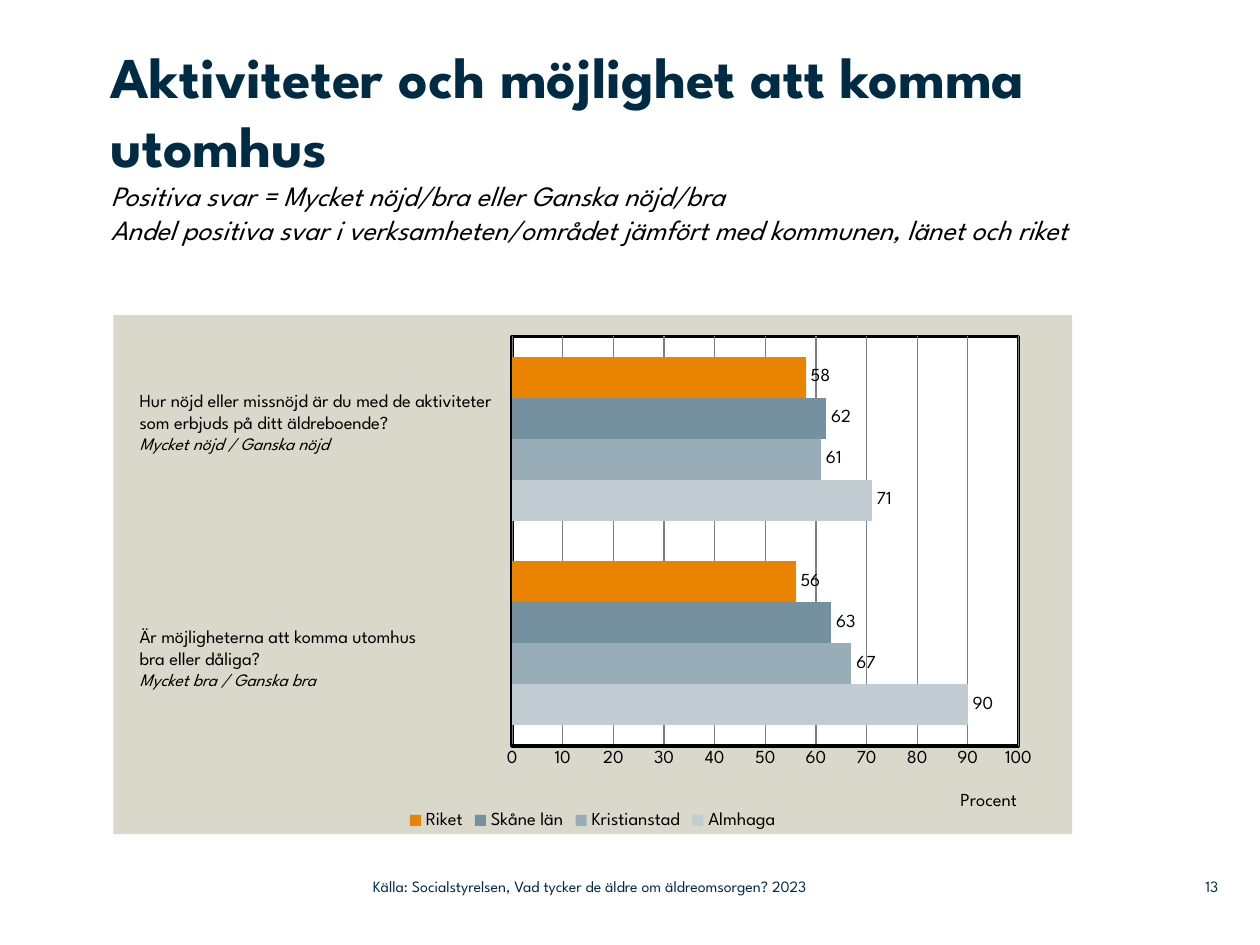
from lxml import etree
from pptx import Presentation
from pptx.chart.data import CategoryChartData
from pptx.dml.color import RGBColor
from pptx.enum.chart import XL_CHART_TYPE, XL_LABEL_POSITION, XL_LEGEND_POSITION, XL_TICK_MARK
from pptx.enum.text import MSO_ANCHOR, MSO_AUTO_SIZE, PP_ALIGN
from pptx.oxml import parse_xml
from pptx.oxml.ns import nsdecls, qn
from pptx.util import Inches, Pt

BAR = XL_CHART_TYPE.BAR_CLUSTERED
OUTSIDE_END = XL_LABEL_POSITION.OUTSIDE_END
LEGEND_BOTTOM = XL_LEGEND_POSITION.BOTTOM
NO_TICK = XL_TICK_MARK.NONE
TOP, MIDDLE = MSO_ANCHOR.TOP, MSO_ANCHOR.MIDDLE
LEFT, RIGHT = PP_ALIGN.LEFT, PP_ALIGN.RIGHT

THEME = {
    "font": "League Spartan",
    "navy": "002B45", "black": "000000", "white": "FFFFFF",
    "panel": "DAD7CB", "grid": "808080",
    "title": 33, "subtitle": 16, "body": 10.5, "answer": 10, "footer": 9,
}

HEADING = [
    ("Aktiviteter och möjlighet att komma utomhus", "title", "navy", True, False),
    ("Positiva svar = Mycket nöjd/bra eller Ganska nöjd/bra", "subtitle", "black", False, True),
    ("Andel positiva svar i verksamheten/området jämfört med kommunen, länet och riket",
     "subtitle", "black", False, True),
]
QUESTIONS = [
    (3.04, 0.98, ["Hur nöjd eller missnöjd är du med de aktiviteter som erbjuds på ditt äldreboende?"],
     "Mycket nöjd / Ganska nöjd"),
    (4.91, 0.81, ["Är möjligheterna att komma utomhus", "bra eller dåliga?"],
     "Mycket bra / Ganska bra"),
]
CATEGORIES = ["1", "2"]
SERIES = [
    ("Almhaga", (90, 71), "C2CDD3"),
    ("Kristianstad", (67, 61), "99ADB9"),
    ("Skåne län", (63, 62), "75909F"),
    ("Riket", (56, 58), "E98300"),
]
AXIS_TITLE = "Procent"
FOOTERS = [
    (2.96, 4.43, "Källa: Socialstyrelsen, Vad tycker de äldre om äldreomsorgen? 2023", LEFT),
    (9.2, 0.47, "13", RIGHT),
]


def style(font, size, color="black", bold=False, italic=False):
    font.name = THEME["font"]
    font.size = Pt(THEME[size])
    font.bold, font.italic = bold, italic
    font.color.rgb = RGBColor.from_string(THEME[color])


def paint(fill, color):
    fill.solid()
    fill.fore_color.rgb = RGBColor.from_string(color)


def write(frame, lines, margin=None, anchor=TOP, align=LEFT):
    frame.word_wrap = True
    frame.auto_size = MSO_AUTO_SIZE.NONE
    frame.vertical_anchor = anchor
    if margin is not None:
        frame.margin_left = frame.margin_right = frame.margin_top = frame.margin_bottom = margin
    for index, (text, *look) in enumerate(lines):
        paragraph = frame.add_paragraph() if index else frame.paragraphs[0]
        paragraph.text = text
        paragraph.alignment = align
        style(paragraph.font, *look)


def manual_layout(target, **places):
    for old in target.findall(qn("c:layout")):
        target.remove(old)
    layout = etree.Element(qn("c:layout"))
    manual = etree.SubElement(layout, qn("c:manualLayout"))
    for tag, value in places.items():
        etree.SubElement(manual, qn("c:" + tag)).set("val", str(value))
    return layout


def add_answers_chart(slide):
    data = CategoryChartData()
    data.categories = CATEGORIES
    for name, values, _ in SERIES:
        data.add_series(name, values)
    chart = slide.shapes.add_chart(
        BAR, Inches(0.9), Inches(2.5), Inches(7.61), Inches(4.12), data).chart
    chart.has_title = False
    style(chart.font, "body")

    plot = chart.plots[0]
    plot.vary_by_categories = False
    plot.gap_width, plot.overlap = 100, 0
    plot.has_data_labels = True
    plot.data_labels.show_value = True
    plot.data_labels.position = OUTSIDE_END
    style(plot.data_labels.font, "body")
    for series, (_, _, color) in zip(plot.series, SERIES):
        paint(series.format.fill, color)

    chart.category_axis.visible = False
    axis = chart.value_axis
    axis.minimum_scale, axis.maximum_scale, axis.major_unit = 0, 100, 10
    axis.major_tick_mark = axis.minor_tick_mark = NO_TICK
    axis.format.line.color.rgb = RGBColor.from_string(THEME["black"])
    axis.format.line.width = Pt(2)
    axis.major_gridlines.format.line.color.rgb = RGBColor.from_string(THEME["grid"])
    axis.major_gridlines.format.line.width = Pt(0.75)
    style(axis.tick_labels.font, "body")
    axis.axis_title.text_frame.text = AXIS_TITLE
    style(axis.axis_title.text_frame.paragraphs[0].font, "body")

    chart.has_legend = True
    chart.legend.position = LEGEND_BOTTOM
    chart.legend.include_in_layout = False
    style(chart.legend.font, "body")

    title = axis.axis_title._element
    layout = manual_layout(title, xMode="edge", yMode="edge", x=0.88, y=0.91)
    title.find(qn("c:tx")).addnext(layout)
    space = chart._chartSpace
    area = space.chart.plotArea
    area.insert(0, manual_layout(
        area, layoutTarget="inner", xMode="edge", yMode="edge",
        x=0.416, y=0.041, w=0.528, h=0.789))

    def surface(color, line):
        return parse_xml(
            f'<c:spPr {nsdecls("c", "a")}><a:solidFill><a:srgbClr val="{color}"/></a:solidFill>'
            f'{line}</c:spPr>')

    border = (f'<a:ln w="{Pt(2)}"><a:solidFill><a:srgbClr val="{THEME["black"]}"/>'
              '</a:solidFill></a:ln>')
    area.append(surface(THEME["white"], border))
    space.chart.addnext(surface(THEME["panel"], "<a:ln><a:noFill/></a:ln>"))


def add_text(slide, left, top, width, height, lines, **options):
    box = slide.shapes.add_textbox(*map(Inches, (left, top, width, height)))
    write(box.text_frame, lines, **options)


def main():
    deck = Presentation()
    deck.slide_width, deck.slide_height = Inches(10), Inches(7.5)
    slide = deck.slides.add_slide(deck.slide_layouts[5])

    add_answers_chart(slide)
    heading = slide.shapes.title
    heading.left, heading.top = Inches(0.88), Inches(0.32)
    heading.width, heading.height = Inches(7.8), Inches(1.89)
    write(heading.text_frame, HEADING, margin=0)

    for top, height, question, answer in QUESTIONS:
        lines = [(text, "body") for text in question]
        lines.append((answer, "answer", "black", False, True))
        add_text(slide, 1.01, top, 3.01, height, lines)

    for left, width, text, align in FOOTERS:
        add_text(slide, left, 6.89, width, 0.29, [(text, "footer", "navy")],
                 margin=0, anchor=MIDDLE, align=align)
    deck.save("out.pptx")


if __name__ == "__main__":
    main()
